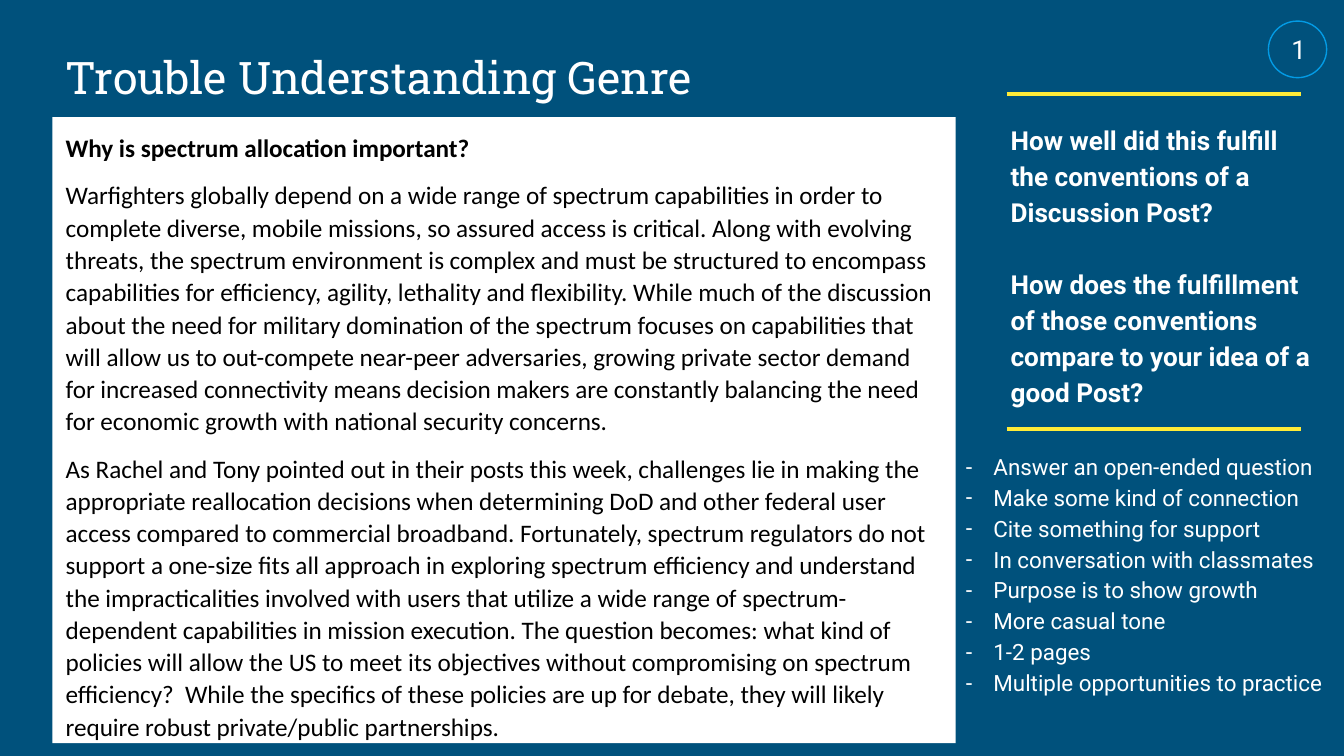
from lxml.etree import SubElement
from pptx import Presentation
from pptx.dml.color import RGBColor
from pptx.enum.shapes import MSO_CONNECTOR, MSO_SHAPE
from pptx.enum.text import MSO_ANCHOR, MSO_AUTO_SIZE, PP_ALIGN
from pptx.oxml.ns import qn
from pptx.util import Pt

TITLE = "Trouble Understanding Genre"
POST = [
    "Why is spectrum allocation important?",
    "Warfighters globally depend on a wide range of spectrum capabilities in order to "
    "complete diverse, mobile missions, so assured access is critical. Along with evolving "
    "threats, the spectrum environment is complex and must be structured to encompass "
    "capabilities for efficiency, agility, lethality and flexibility. While much of the "
    "discussion about the need for military domination of the spectrum focuses on "
    "capabilities that will allow us to out-compete near-peer adversaries, growing private "
    "sector demand for increased connectivity means decision makers are constantly balancing "
    "the need for economic growth with national security concerns.",
    "As Rachel and Tony pointed out in their posts this week, challenges lie in making the "
    "appropriate reallocation decisions when determining DoD and other federal user access "
    "compared to commercial broadband. Fortunately, spectrum regulators do not support a "
    "one-size fits all approach in exploring spectrum efficiency and understand the "
    "impracticalities involved with users that utilize a wide range of spectrum- dependent "
    "capabilities in mission execution. The question becomes: what kind of policies will "
    "allow the US to meet its objectives without compromising on spectrum efficiency?  While "
    "the specifics of these policies are up for debate, they will likely require robust "
    "private/public partnerships.",
]
QUESTIONS = [
    "How well did this fulfill the conventions of a Discussion Post?",
    "How does the fulfillment of those conventions compare to your idea of a good Post?",
]
CONVENTIONS = [
    "Answer an open-ended question",
    "Make some kind of connection",
    "Cite something for support",
    "In conversation with classmates",
    "Purpose is to show growth",
    "More casual tone",
    "1-2 pages",
    "Multiple opportunities to practice",
]
PAGE_NUMBER = "1"

COLORS = {"background": "00517C", "white": "FFFFFF", "black": "000000",
          "rule": "FFEB38", "ring": "039BE5"}
RULE_LEFT, RULE_RIGHT = 539.3, 697
RULE_TOPS = [50.4, 229.7]
INSET = 7.2


def color(name):
    return RGBColor.from_string(COLORS[name])


def place(box, left, top, width, height):
    box.left, box.top, box.width, box.height = Pt(left), Pt(top), Pt(width), Pt(height)


def write(box, lines, font, size, ink="white", bold=False, spacing=1.0, gap=0,
          anchor=MSO_ANCHOR.TOP):
    """Fill a box with paragraphs; gap is the space between them."""
    frame = box.text_frame
    frame.text = "\n".join(lines)
    frame.word_wrap = True
    frame.auto_size = MSO_AUTO_SIZE.NONE
    frame.vertical_anchor = anchor
    frame.margin_left = frame.margin_right = Pt(INSET)
    frame.margin_top = frame.margin_bottom = Pt(INSET)
    for index, paragraph in enumerate(frame.paragraphs):
        paragraph.alignment = PP_ALIGN.LEFT
        paragraph.line_spacing = spacing
        paragraph.space_before = Pt(gap if index else 0)
        paragraph.space_after = Pt(0)
        for span in paragraph.runs:
            span.font.name = font
            span.font.size = Pt(size)
            span.font.bold = bold
            span.font.color.rgb = color(ink)


def set_bullets(box, mark=None, margin=0, indent=0):
    for paragraph in box.text_frame.paragraphs:
        properties = paragraph._p.get_or_add_pPr()
        properties.set("marL", str(Pt(margin)))
        properties.set("indent", str(Pt(indent)))
        if mark:
            SubElement(properties, qn("a:buChar")).set("char", mark)
        else:
            SubElement(properties, qn("a:buNone"))


deck = Presentation()
deck.slide_width, deck.slide_height = Pt(720), Pt(405)
page = deck.slides.add_slide(deck.slide_layouts.get_by_name("Two Content"))
page.background.fill.solid()
page.background.fill.fore_color.rgb = color("background")
title, post, conventions = page.placeholders

place(title, 28, 8.6, 409, 54)
write(title, [TITLE], "Roboto Slab", 24, anchor=MSO_ANCHOR.BOTTOM)

place(post, 28, 62.7, 484, 335.5)
post.fill.solid()
post.fill.fore_color.rgb = color("white")
write(post, POST, "Calibri", 13.5, ink="black", spacing=1.07, gap=8)
post.text_frame.paragraphs[0].runs[0].font.bold = True
set_bullets(post)

place(conventions, 489, 233.3, 231, 153.4)
write(conventions, CONVENTIONS, "Roboto", 12, spacing=1.15)
set_bullets(conventions, "-", 36, -15)

questions = page.shapes.add_textbox(Pt(534.3), Pt(57), Pt(180.7), Pt(167.8))
write(questions, QUESTIONS, "Roboto", 14, bold=True, spacing=1.15, gap=19.3)

for top in RULE_TOPS:
    rule = page.shapes.add_connector(
        MSO_CONNECTOR.STRAIGHT, Pt(RULE_LEFT), Pt(top), Pt(RULE_RIGHT), Pt(top))
    rule.line.color.rgb = color("rule")
    rule.line.width = Pt(2.25)
    SubElement(rule._element.spPr, qn("a:effectLst"))

number = page.shapes.add_textbox(Pt(684.7), Pt(10.8), Pt(21), Pt(31.7))
write(number, [PAGE_NUMBER], "Roboto", 14)

ring = page.shapes.add_shape(MSO_SHAPE.OVAL, Pt(679.5), Pt(11.3), Pt(31.2), Pt(30.3))
ring.shadow.inherit = False
ring.fill.background()
ring.line.color.rgb = color("ring")
ring.line.width = Pt(0.75)

deck.save("out.pptx")
